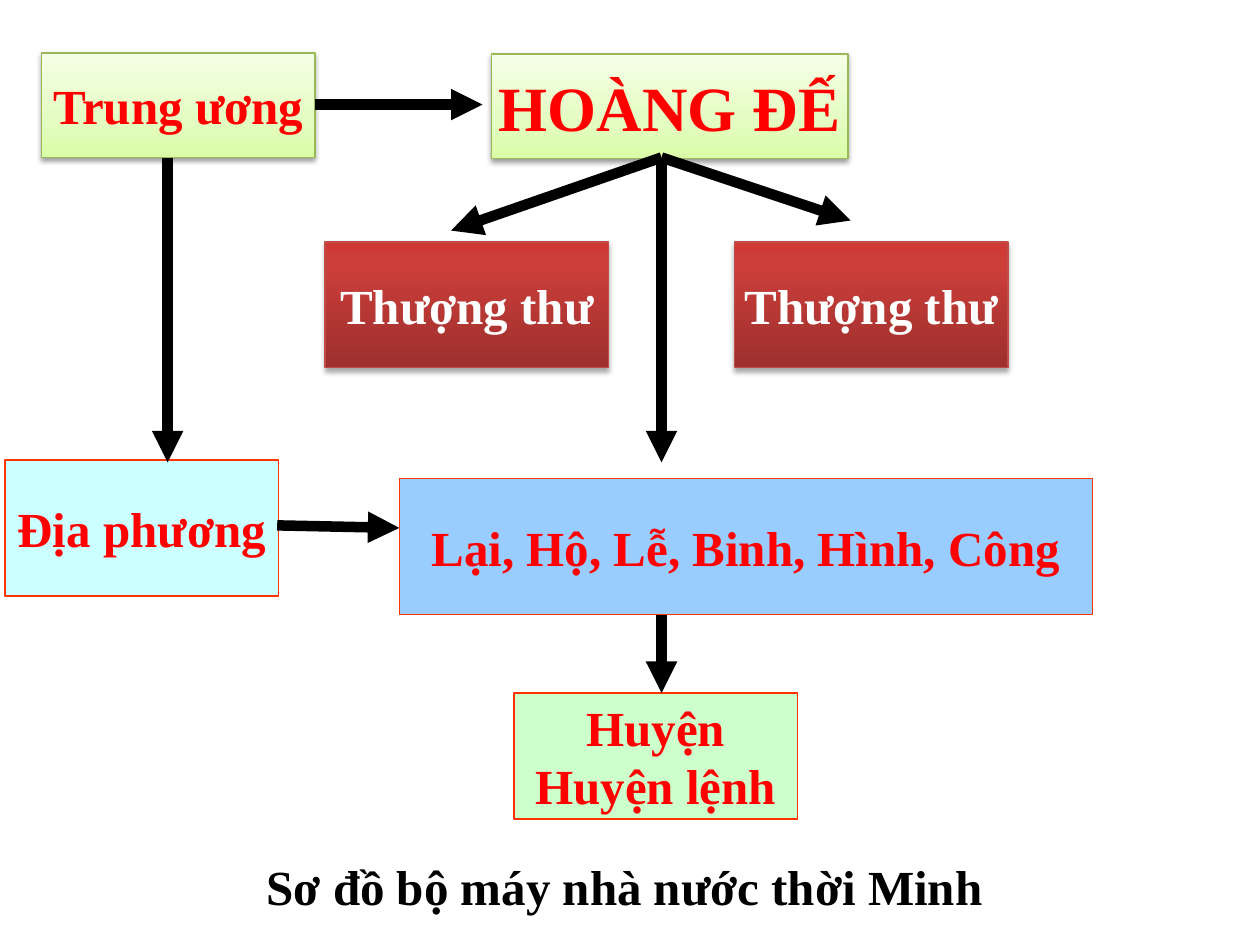
"""Build a one-slide chart of the Ming dynasty state apparatus."""
from lxml import etree
from pptx import Presentation
from pptx.dml.color import RGBColor
from pptx.enum.shapes import MSO_CONNECTOR, MSO_SHAPE
from pptx.enum.text import MSO_ANCHOR, MSO_AUTO_SIZE, PP_ALIGN
from pptx.oxml.ns import qn
from pptx.util import Inches, Pt

RECT, LINE = MSO_SHAPE.RECTANGLE, MSO_CONNECTOR.STRAIGHT
MIDDLE, CENTER = MSO_ANCHOR.MIDDLE, PP_ALIGN.CENTER
GROW = MSO_AUTO_SIZE.SHAPE_TO_FIT_TEXT

THEME = {
    "font": "Times New Roman", "size": 28, "big": 36,
    "ink": "000000", "edge": 0.75, "arrow": 6,
    "lime": {"fill": [(0, "DAFDA7"), (35, "E4FCC2"), (100, "F5FFE7")],
             "line": "98B955", "text": "FF0000", "shadow": (38, 3.1, 1.6)},
    "brick": {"fill": [(0, "9C2F2D"), (80, "CB3E3A"), (100, "CE3B37")],
              "line": "BF4C48", "text": "FFFFFF", "shadow": (35, 3.1, 1.8)},
    "cyan": {"fill": "CCFFFF", "line": "FF3300", "text": "FF0000"},
    "mint": {"fill": "CCFFCC", "line": "FF3300", "text": "FF0000"},
    "blue": {"fill": "99CCFF", "line": "FF3300", "text": "FF0000"},
}

BOXES = [
    (["Trung ương"], "lime", "size", (0.33, 0.42, 2.17, 0.83)),
    (["HOÀNG ĐẾ"], "lime", "big", (3.9, 0.43, 2.83, 0.83)),
    (["Địa phương"], "cyan", "size", (0.04, 3.65, 2.17, 1.08)),
    (["Thượng thư"], "brick", "size", (2.58, 1.92, 2.25, 1)),
    (["Thượng thư"], "brick", "size", (5.83, 1.92, 2.17, 1)),
    (["Huyện", "Huyện lệnh"], "mint", "size", (4.08, 5.5, 2.25, 1)),
]
BUREAUS = (["Lại, Hộ, Lễ, Binh, Hình, Công"], "blue", "size",
           (3.17, 3.8, 5.5, 1.08))
CAPTION = (["Sơ đồ bộ máy nhà nước thời Minh"], (0.33, 6.75, 9.25, 0.57))
THRONE = (5.25, 1.25)
ARROWS = [
    ((2.5, 0.83), (3.83, 0.83)),
    ((1.33, 1.25), (1.33, 3.67)),
    (THRONE, (5.25, 3.67)),
    ((5.25, 4.75), (5.25, 5.5)),
    ((2.2, 4.17), (3.17, 4.19)),
    (THRONE, (6.75, 1.75)),
    (THRONE, (3.58, 1.83)),
]


def rgb(code):
    """Turn a hex code into a colour."""
    return RGBColor.from_string(code)


def node(parent, tag, **attrs):
    """Add a drawing element with its attributes."""
    return etree.SubElement(parent, qn(tag), {k: str(v) for k, v in attrs.items()})


def write(frame, lines, size, color):
    """Fill a text frame with centred bold lines."""
    for i, line in enumerate(lines):
        para = frame.paragraphs[0] if i == 0 else frame.add_paragraph()
        para.alignment = CENTER
        run = para.add_run()
        run.text = line
        font = run.font
        font.name, font.size, font.bold = THEME["font"], Pt(size), True
        font.color.rgb = rgb(color)


def paint(shape, fill):
    """Apply a solid colour or a rising gradient."""
    if isinstance(fill, str):
        shape.fill.solid()
        shape.fill.fore_color.rgb = rgb(fill)
        return
    shape.fill.gradient()
    shape.fill.gradient_angle = 90
    stops = shape._element.spPr.find(".//" + qn("a:gsLst"))
    for stop in list(stops):
        stops.remove(stop)
    for pos, code in fill:
        node(node(stops, "a:gs", pos=pos * 1000), "a:srgbClr", val=code)


def shade(shape, alpha, blur, dist):
    """Drop a soft shadow straight down."""
    effects = shape._element.spPr.find(qn("a:effectLst"))
    drop = node(effects, "a:outerShdw", blurRad=Pt(blur), dist=Pt(dist),
                dir=5400000, rotWithShape=0)
    color = node(drop, "a:srgbClr", val=THEME["ink"])
    node(color, "a:alpha", val=alpha * 1000)


def add_box(slide, lines, kind, size, place):
    """Draw one labelled box."""
    look = THEME[kind]
    box = slide.shapes.add_shape(RECT, *map(Inches, place))
    paint(box, look["fill"])
    box.line.color.rgb = rgb(look["line"])
    box.line.width = Pt(THEME["edge"])
    box.shadow.inherit = False
    if "shadow" in look:
        shade(box, *look["shadow"])
    frame = box.text_frame
    frame.word_wrap, frame.vertical_anchor = False, MIDDLE
    write(frame, lines, THEME[size], look["text"])


def add_arrow(slide, start, end):
    """Draw one thick arrow."""
    arrow = slide.shapes.add_connector(LINE, *map(Inches, start + end))
    arrow.line.color.rgb = rgb(THEME["ink"])
    arrow.line.width = Pt(THEME["arrow"])
    node(arrow.line._get_or_add_ln(), "a:tailEnd", type="triangle")
    node(arrow._element.spPr, "a:effectLst")


def add_caption(slide, lines, place):
    """Write the caption under the chart."""
    frame = slide.shapes.add_textbox(*map(Inches, place)).text_frame
    frame.word_wrap, frame.auto_size = True, GROW
    write(frame, lines, THEME["size"], THEME["ink"])


def main():
    """Compose and save the slide."""
    deck = Presentation()
    deck.slide_width, deck.slide_height = Inches(10), Inches(7.5)
    slide = deck.slides.add_slide(deck.slide_layouts[6])
    for box in BOXES:
        add_box(slide, *box)
    for arrow in ARROWS:
        add_arrow(slide, *arrow)
    add_caption(slide, *CAPTION)
    add_box(slide, *BUREAUS)
    deck.save("out.pptx")


if __name__ == "__main__":
    main()
